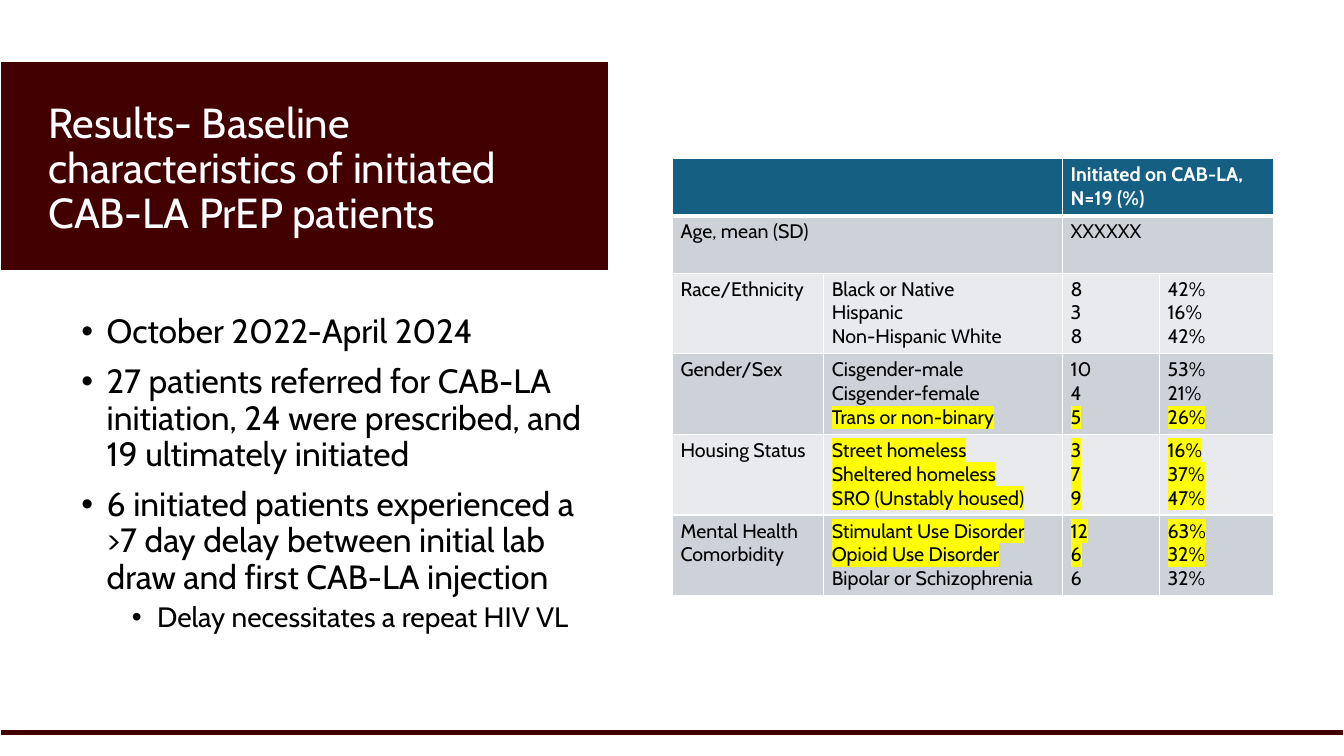
from dataclasses import dataclass

from lxml.etree import SubElement
from pptx import Presentation
from pptx.dml.color import RGBColor as Color
from pptx.enum.shapes import MSO_SHAPE as Shape
from pptx.enum.text import MSO_ANCHOR as Anchor
from pptx.oxml import parse_xml
from pptx.oxml.ns import nsdecls, qn
from pptx.util import Inches, Pt

GROUPS = [
    ("Race/Ethnicity", [
        ("Black or Native", "8", "42%", False),
        ("Hispanic", "3", "16%", False),
        ("Non-Hispanic White", "8", "42%", False)]),
    ("Gender/Sex", [
        ("Cisgender-male", "10", "53%", False),
        ("Cisgender-female", "4", "21%", False),
        ("Trans or non-binary", "5", "26%", True)]),
    ("Housing Status", [
        ("Street homeless", "3", "16%", True),
        ("Sheltered homeless", "7", "37%", True),
        ("SRO (Unstably housed)", "9", "47%", True)]),
    ("Mental Health Comorbidity", [
        ("Stimulant Use Disorder", "12", "63%", True),
        ("Opioid Use Disorder", "6", "32%", True),
        ("Bipolar or Schizophrenia", "6", "32%", False)]),
]
BULLETS = [
    ("October 2022-April 2024", 0),
    ("27 patients referred for CAB-LA initiation, 24 were prescribed, and 19 ultimately initiated", 0),
    ("6 initiated patients experienced a >7 day delay between initial lab draw and first CAB-LA injection", 0),
    ("Delay necessitates a repeat HIV VL", 1),
]


@dataclass(frozen=True)
class Theme:
    """Colours, font and type sizes of the slide."""
    font: str = "Cabin"
    maroon: str = "420000"
    header: str = "156082"
    bands: tuple = ("CCD2D8", "E8EAED")
    white: str = "FFFFFF"
    black: str = "000000"
    marker: str = "FFFF00"
    title_size: int = 30
    bullet_sizes: tuple = (24, 20)
    table_size: int = 14


class SlideBuilder:
    """Draws each kind of element on one slide in one theme."""

    def __init__(self, slide, theme):
        """Keep the slide and its theme."""
        self.slide = slide
        self.theme = theme

    def format_paragraph(self, paragraph, size, color, bold=False, marked=False):
        """Style every run of a paragraph."""
        for run in paragraph.runs:
            run.font.size = Pt(size)
            run.font.bold = bold
            run.font.color.rgb = Color.from_string(color)
            run.font.name = self.theme.font
            if marked:
                highlight = parse_xml(
                    f'<a:highlight {nsdecls("a")}><a:srgbClr val="{self.theme.marker}"/></a:highlight>')
                run.font._element.find(qn("a:latin")).addprevious(highlight)

    def bar(self, left, top, width, height):
        """Add a maroon rectangle with a white outline."""
        shape = self.slide.shapes.add_shape(
            Shape.RECTANGLE, Inches(left), Inches(top), Inches(width), Inches(height))
        shape.shadow.inherit = False
        shape.fill.solid()
        shape.fill.fore_color.rgb = Color.from_string(self.theme.maroon)
        shape.line.color.rgb = Color.from_string(self.theme.white)
        shape.line.width = Pt(1.5)

    def text_box(self, left, top, width, height, anchor):
        """Add a wrapping text box and return its text frame."""
        box = self.slide.shapes.add_textbox(
            Inches(left), Inches(top), Inches(width), Inches(height))
        box.text_frame.word_wrap = True
        box.text_frame.vertical_anchor = anchor
        return box.text_frame

    def title(self, text, *place):
        """Add the slide title."""
        paragraph = self.text_box(*place, Anchor.BOTTOM).paragraphs[0]
        paragraph.text = text
        paragraph.line_spacing = 0.9
        self.format_paragraph(paragraph, self.theme.title_size, self.theme.white)

    def bullets(self, items, *place):
        """Add a bulleted list of (text, level) items."""
        text_frame = self.text_box(*place, Anchor.TOP)
        text_frame.text = "\n".join(text for text, level in items)
        for paragraph, (text, level) in zip(text_frame.paragraphs, items):
            paragraph.level = level
            paragraph.line_spacing = 0.9
            paragraph.space_before = Pt((10, 5)[level])
            properties = paragraph._p.get_or_add_pPr()
            properties.set("marL", str(Inches(0.25 + 0.5 * level)))
            properties.set("indent", str(Inches(-0.25)))
            SubElement(properties, qn("a:buFont"), typeface="Arial")
            SubElement(properties, qn("a:buChar"), char="•")
            self.format_paragraph(paragraph, self.theme.bullet_sizes[level], self.theme.black)

    def table(self, left, top, columns, rows):
        """Add an empty banded table and return it."""
        table = self.slide.shapes.add_table(
            len(rows), len(columns), Inches(left), Inches(top),
            Inches(sum(columns)), Inches(sum(rows))).table
        for column, width in zip(table.columns, columns):
            column.width = Inches(width)
        for index, height in enumerate(rows):
            table.rows[index].height = Inches(height)
            fill = self.theme.bands[(index - 1) % 2] if index else self.theme.header
            for cell in table.rows[index].cells:
                self.cell_style(cell, fill, 3 if index == 1 else 1, 1 if index else 3)
        return table

    def cell_style(self, cell, fill, top_width, bottom_width):
        """Fill a cell and give it white borders and tight margins."""
        cell.fill.solid()
        cell.fill.fore_color.rgb = Color.from_string(fill)
        cell.margin_left = cell.margin_right = Inches(0.08)
        cell.margin_top = cell.margin_bottom = Inches(0.04)
        widths = {"lnL": 1, "lnR": 1, "lnT": top_width, "lnB": bottom_width}
        for index, (side, width) in enumerate(widths.items()):
            border = parse_xml(
                f'<a:{side} {nsdecls("a")} w="{Pt(width)}"><a:solidFill>'
                f'<a:srgbClr val="{self.theme.white}"/></a:solidFill></a:{side}>')
            cell._tc.get_or_add_tcPr().insert(index, border)

    def cell_text(self, cell, lines, marks=(False,), header=False):
        """Write lines into a cell, highlighting the marked ones."""
        cell.text_frame.text = "\n".join(lines)
        color = self.theme.white if header else self.theme.black
        for paragraph, marked in zip(cell.text_frame.paragraphs, marks):
            self.format_paragraph(paragraph, self.theme.table_size, color, header, marked)


def main():
    """Build and save the slide."""
    presentation = Presentation()
    presentation.slide_width = Inches(13.33)
    presentation.slide_height = Inches(7.5)
    slide = presentation.slides.add_slide(presentation.slide_layouts[6])
    builder = SlideBuilder(slide, Theme())

    builder.bar(0, 0.6, 6.04, 2.09)
    table = builder.table(6.67, 1.57, [1.5, 2.37, 0.96, 1.13], [0.57] * 2 + [0.8] * len(GROUPS))
    for row in range(2):
        for column in (0, 2):
            table.cell(row, column).merge(table.cell(row, column + 1))
    builder.cell_text(table.cell(0, 2), ["Initiated on CAB-LA, N=19 (%)"], header=True)
    builder.cell_text(table.cell(1, 0), ["Age, mean (SD)"])
    builder.cell_text(table.cell(1, 2), ["XXXXXX"])
    for row, (group, entries) in enumerate(GROUPS, start=2):
        builder.cell_text(table.cell(row, 0), [group])
        *texts, marks = zip(*entries)
        for column, lines in enumerate(texts, start=1):
            builder.cell_text(table.cell(row, column), lines, marks)

    builder.title("Results- Baseline characteristics of initiated \vCAB-LA PrEP patients",
                  0.38, 0.79, 5.27, 1.62)
    builder.bar(0, 7.23, 13.33, 0.07)
    builder.bullets(BULLETS, 0.71, 3.07, 5.27, 3.88)
    presentation.save("out.pptx")


if __name__ == "__main__":
    main()
